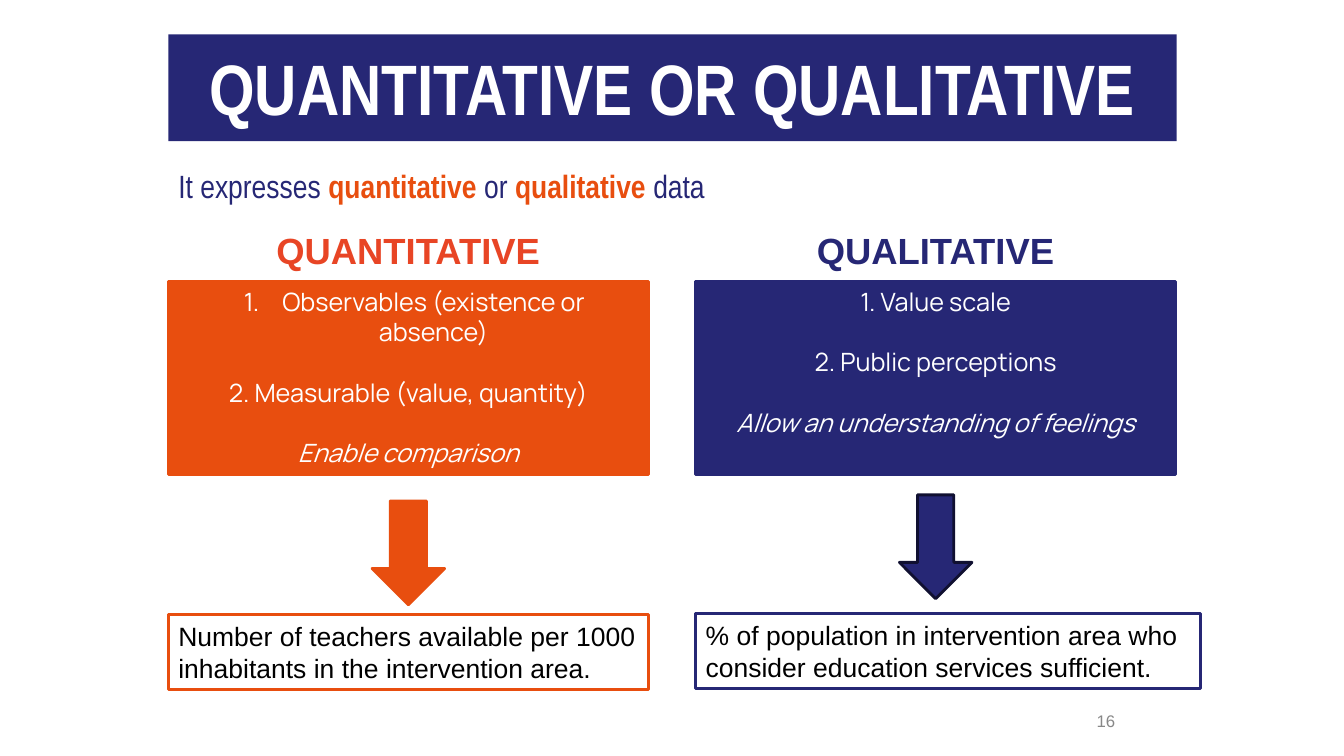
from lxml.etree import SubElement
from pptx import Presentation
from pptx.dml.color import RGBColor
from pptx.enum.shapes import MSO_SHAPE
from pptx.enum.text import MSO_ANCHOR, MSO_AUTO_SIZE, PP_ALIGN
from pptx.oxml.ns import qn
from pptx.util import Inches, Pt

NAVY, ORANGE, WHITE, BLACK = "262775", "E84E0F", "FFFFFF", "000000"
LEFT, RIGHT, WIDE = 1.67, 6.9, 4.76
HEAD = dict(name="Arial", size=Pt(26), bold=True)
LIST = dict(name="Manrope", size=Pt(18))
NOTE = dict(name="Arial", size=Pt(18.9))
LEAD = dict(name="Arial Narrow", size=Pt(23))


def tint(code):
    return RGBColor.from_string(code)


class Board:
    def __init__(self):
        self.deck = Presentation()
        self.deck.slide_width = Inches(13.33)
        self.deck.slide_height = Inches(7.5)
        self.slide = self.deck.slides.add_slide(self.deck.slide_layouts[5])

    def place(self, shape, at):
        for key, val in zip(("left", "top", "width", "height"), at):
            setattr(shape, key, Inches(val))

    def paint(self, shape, fill, edge):
        shape.shadow.inherit = False
        shape.fill.solid()
        shape.fill.fore_color.rgb = tint(fill)
        shape.line.color.rgb = tint(edge)
        shape.line.width = Pt(2)

    def words(self, shape, paras, style, align, pad=0.05, gap=0, anchor=MSO_ANCHOR.TOP):
        frame = shape.text_frame
        form = dict(word_wrap=True, auto_size=MSO_AUTO_SIZE.NONE, vertical_anchor=anchor,
                    margin_left=Inches(0.1), margin_right=Inches(0.1),
                    margin_top=Inches(pad), margin_bottom=Inches(pad))
        for key, val in form.items():
            setattr(frame, key, val)
        for num, runs in enumerate(paras):
            para = frame.add_paragraph() if num else frame.paragraphs[0]
            para.alignment = align
            if num:
                para.space_before = Pt(gap)
            for text, code, extra in runs:
                run = para.add_run()
                run.text = text
                run.font.color.rgb = tint(code)
                for key, val in {**style, **extra}.items():
                    setattr(run.font, key, val)
        return frame

    def title(self, text, at):
        shape = self.slide.shapes.title
        self.place(shape, at)
        shape.fill.solid()
        shape.fill.fore_color.rgb = tint(NAVY)
        style = dict(name="Arial Narrow", size=Pt(51), bold=True)
        self.words(shape, [[(text, WHITE, {})]], style, PP_ALIGN.CENTER, pad=0.1)

    def label(self, runs, at, style, align, **more):
        box = self.slide.shapes.add_textbox(*map(Inches, at))
        return self.words(box, [runs], style, align, **more)

    def shape(self, kind, at, fill, edge):
        shape = self.slide.shapes.add_shape(kind, *map(Inches, at))
        self.paint(shape, fill, edge)
        return shape

    def panel(self, paras, at, fill, edge, style, align, gap=0):
        shape = self.shape(MSO_SHAPE.RECTANGLE, at, fill, edge)
        return self.words(shape, paras, style, align, gap=gap)

    def number(self, para):
        props = para._p.get_or_add_pPr()
        props.set("marL", str(Inches(0.5)))
        props.set("indent", str(Inches(-0.38)))
        shade = SubElement(props, qn("a:buClr"))
        SubElement(shade, qn("a:srgbClr"), val=WHITE)
        SubElement(props, qn("a:buFont"), typeface="Manrope")
        SubElement(props, qn("a:buAutoNum"), type="arabicPeriod")


def main():
    board = Board()
    board.title("QUANTITATIVE OR QUALITATIVE", (LEFT, 0.34, 10, 1.06))
    bold = dict(bold=True)
    lead = [("It expresses ", NAVY, {}), ("quantitative ", ORANGE, bold), ("or ", NAVY, {}),
            ("qualitative ", ORANGE, bold), ("data", NAVY, {})]
    frame = board.label(lead, (LEFT, 1.64, 9.69, 0.53), LEAD, PP_ALIGN.JUSTIFY)
    frame.paragraphs[0].line_spacing = 0.9

    sides = [
        (LEFT, "QUANTITATIVE", "E84525", ORANGE, ORANGE, 4.97, 6.1, WIDE,
         ["Observables (existence or absence)", "2. Measurable (value, quantity)",
          "Enable comparison"],
         "Number of teachers available per 1000 inhabitants in the intervention area."),
        (RIGHT, "QUALITATIVE", NAVY, NAVY, "101031", 4.91, 6.09, 5.01,
         ["1. Value scale", "2. Public perceptions", "Allow an understanding of feelings"],
         "% of population in intervention area who consider education services sufficient."),
    ]
    lists = []
    for x, head, ink, hue, rim, drop, base, span, items, note in sides:
        board.label([(head, ink, {})], (x, 2.21, WIDE, 0.54), HEAD, PP_ALIGN.CENTER)
        paras = [[(item, WHITE, dict(italic=item == items[-1]))] for item in items]
        lists.append(board.panel(paras, (x, 2.79, WIDE, 1.92), hue, hue, LIST,
                                 PP_ALIGN.CENTER, gap=21.6))
        board.shape(MSO_SHAPE.DOWN_ARROW, (x + (WIDE - 0.72) / 2, drop, 0.72, 1.03), hue, rim)
        board.panel([[(note, BLACK, {})]], (x, base, span, 0.74), WHITE, hue, NOTE,
                    PP_ALIGN.LEFT)
    board.number(lists[0].paragraphs[0])

    board.label([("16", "888888", {})], (8.83, 6.95, 2.33, 0.4),
                dict(name="Arial", size=Pt(12)), PP_ALIGN.RIGHT, anchor=MSO_ANCHOR.MIDDLE)
    board.deck.save("out.pptx")


if __name__ == "__main__":
    main()
